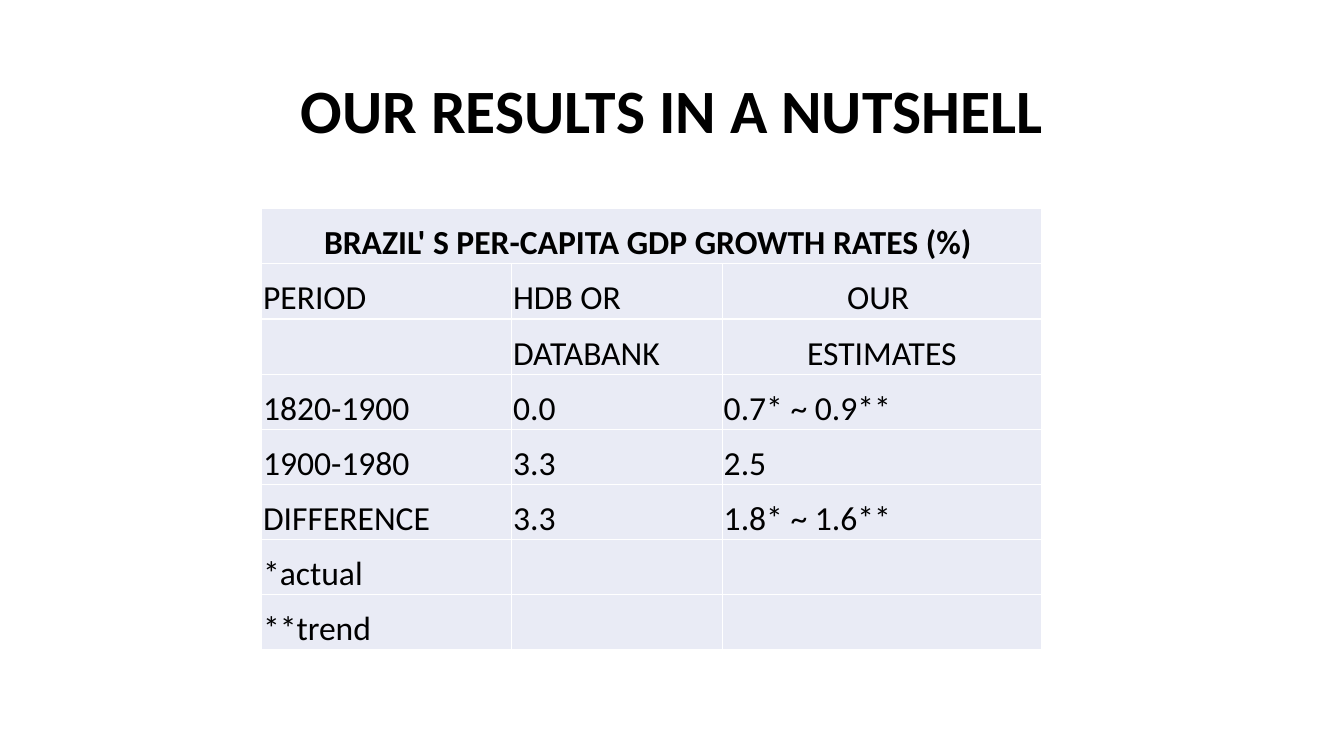
from lxml import etree
from pptx import Presentation
from pptx.dml.color import RGBColor
from pptx.enum.text import MSO_ANCHOR, PP_ALIGN
from pptx.oxml.ns import qn
from pptx.util import Cm, Pt

LEFT, MID = PP_ALIGN.LEFT, PP_ALIGN.CENTER
LOW, HALF = MSO_ANCHOR.BOTTOM, MSO_ANCHOR.MIDDLE

# Content
TITLE = "OUR RESULTS IN A NUTSHELL"
HEAD = "BRAZIL' S PER-CAPITA GDP GROWTH RATES (%) "
ROWS = [
    (HEAD, "", ""),
    ("PERIOD", "HDB OR", "OUR "),
    ("", "DATABANK", "ESTIMATES"),
    ("1820-1900", "0.0", "0.7* ~ 0.9**"),
    ("1900-1980", "3.3", "2.5"),
    ("DIFFERENCE", "3.3", "1.8* ~ 1.6**"),
    ("*actual", "", ""),
    ("**trend", "", ""),
]
CENTRED = {(0, 0), (1, 2), (2, 2)}
WIDTHS = [6.3, 5.31, 8.03]
HIGH = 1.39
FONT, INK, PALE, WHITE = "Calibri", "000000", "E9EBF5", "FFFFFF"


def tint(code):
    return RGBColor.from_string(code)


def write(frame, text, size, bold, align):
    frame.text = text
    para = frame.paragraphs[0]
    para.alignment = align
    for run in para.runs:
        font = run.font
        font.name, font.size, font.bold = FONT, Pt(size), bold
        font.color.rgb = tint(INK)
    return para


def edge(cell):
    props = cell._tc.get_or_add_tcPr()
    for side in ("a:lnL", "a:lnR", "a:lnT", "a:lnB"):
        line = etree.SubElement(props, qn(side), w=str(Pt(1)))
        fill = etree.SubElement(line, qn("a:solidFill"))
        etree.SubElement(fill, qn("a:srgbClr"), val=WHITE)


def dress(cell):
    edge(cell)
    cell.fill.solid()
    cell.fill.fore_color.rgb = tint(PALE)
    cell.vertical_anchor = LOW
    cell.margin_left = cell.margin_right = cell.margin_top = Cm(0.03)
    cell.margin_bottom = 0


# Slide
deck = Presentation()
deck.slide_width, deck.slide_height = Cm(33.87), Cm(19.05)
slide = deck.slides.add_slide(deck.slide_layouts[6])

# Title
box = slide.shapes.add_textbox(Cm(2.33), Cm(1.02), Cm(29.21), Cm(3.68))
frame = box.text_frame
frame.word_wrap = True
frame.vertical_anchor = HALF
write(frame, TITLE, 44, True, MID).line_spacing = 0.9

# Table
grid = slide.shapes.add_table(
    len(ROWS), len(WIDTHS), Cm(6.6), Cm(5.26),
    Cm(sum(WIDTHS)), Cm(HIGH * len(ROWS))).table
for col, wide in zip(grid.columns, WIDTHS):
    col.width = Cm(wide)
for r, row in enumerate(ROWS):
    grid.rows[r].height = Cm(HIGH)
    for c, text in enumerate(row):
        cell = grid.cell(r, c)
        dress(cell)
        align = MID if (r, c) in CENTRED else LEFT
        write(cell.text_frame, text, 24, r == 0, align)
grid.cell(0, 0).merge(grid.cell(0, len(WIDTHS) - 1))

deck.save("out.pptx")
